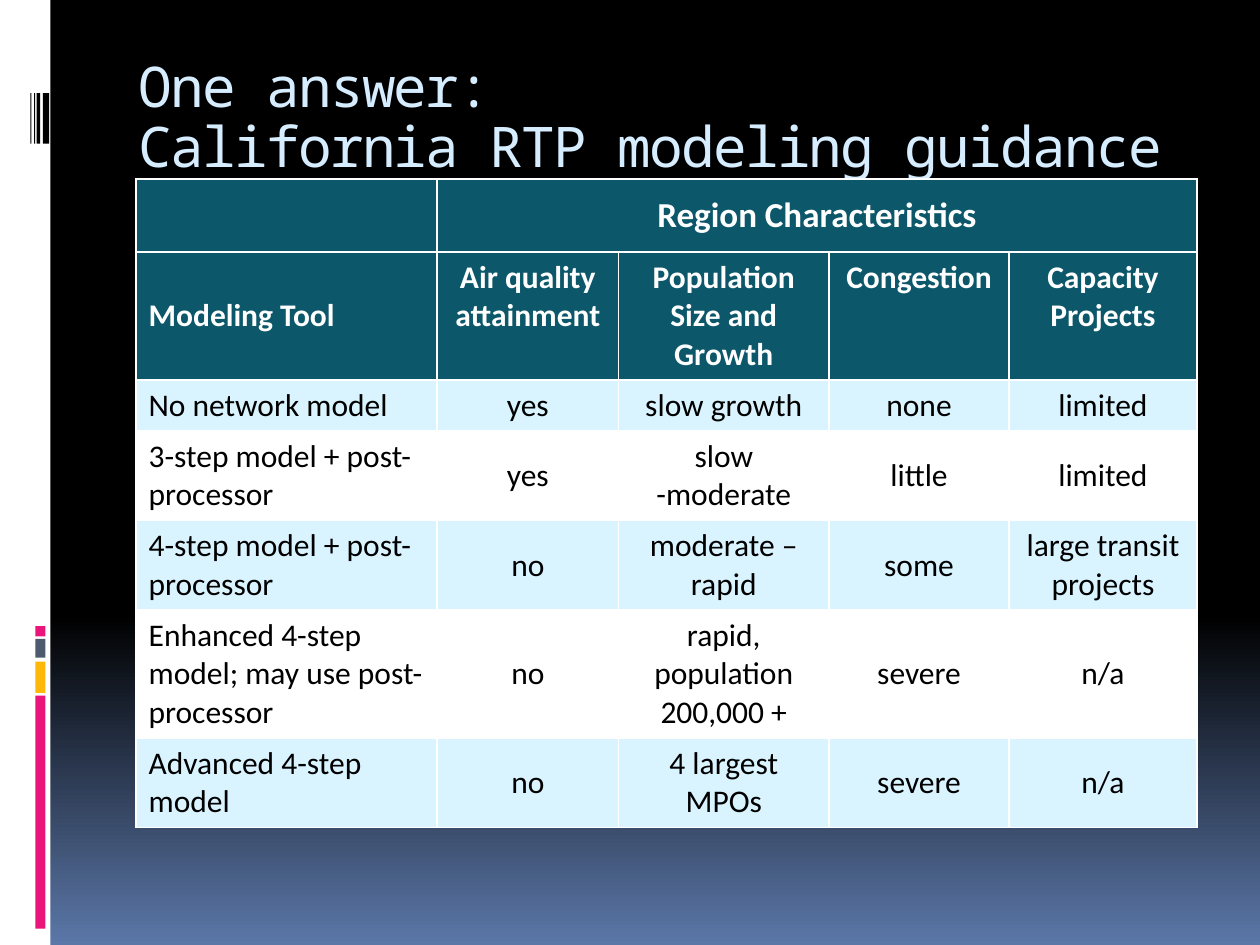
from dataclasses import dataclass

from lxml import etree
from pptx import Presentation
from pptx import util as u
from pptx.dml.color import RGBColor
from pptx.enum import shapes, text
from pptx.oxml.ns import qn


@dataclass(frozen=True)
class Theme:
    black: str = "000000"
    white: str = "FFFFFF"
    dusk: str = "5B77A8"
    pink: str = "EA157A"
    amber: str = "FEB80A"
    slate: str = "4E5B6F"
    title: str = "D6ECFF"
    header: str = "0C586A"
    band: str = "D9F4FF"
    title_font: str = "Noto Sans Mono"
    body_font: str = "Calibri"
    title_size: int = 32
    group_size: int = 20
    body_size: int = 18


theme = Theme()


def add_bar(slide, left, top, width, height, color):
    bar = slide.shapes.add_shape(
        shapes.MSO_SHAPE.RECTANGLE, *map(u.Inches, (left, top, width, height)))
    bar.shadow.inherit = False
    bar.fill.solid()
    bar.fill.fore_color.rgb = RGBColor.from_string(color)
    bar.line.fill.background()


def add_borders(cell, color):
    """Draw a 1 pt line on all four sides; must run before the cell is filled."""
    properties = cell._tc.get_or_add_tcPr()
    for side in ("a:lnL", "a:lnR", "a:lnT", "a:lnB"):
        line = etree.SubElement(properties, qn(side), w=str(u.Pt(1)))
        fill = etree.SubElement(line, qn("a:solidFill"))
        etree.SubElement(fill, qn("a:srgbClr"), val=color)


presentation = Presentation()
presentation.slide_width = u.Inches(10)
presentation.slide_height = u.Inches(7.5)
slide = presentation.slides.add_slide(presentation.slide_layouts[5])

# Background: black until 65 %, then fading to blue at the bottom
background = slide.background.fill
background.gradient()
background.gradient_angle = 270
for stop, position, color in zip(
        background.gradient_stops, (0.65, 1), (theme.black, theme.dusk)):
    stop.position = position
    stop.color.rgb = RGBColor.from_string(color)

# Side strip with coloured blocks and black stripes
add_bar(slide, 0, 0, 0.4, 7.5, theme.white)
for top, height, color in ((5.52, 1.85, theme.pink), (5.25, 0.25, theme.amber),
                           (5.07, 0.15, theme.slate), (4.97, 0.08, theme.pink)):
    add_bar(slide, 0.28, top, 0.08, height, color)
for left, width in ((0.34, 0.05), (0.29, 0.03), (0.27, 0.01), (0.24, 0.01)):
    add_bar(slide, left, 0.74, width, 0.4, theme.black)

# Title
title = slide.shapes.title
title.left, title.top, title.width, title.height = map(
    u.Inches, (1, 0.25, 8.5, 1.17))
frame = title.text_frame
frame.text = "One answer:\vCalifornia RTP modeling guidance"
frame.auto_size = text.MSO_AUTO_SIZE.NONE
frame.vertical_anchor = text.MSO_ANCHOR.BOTTOM
frame.margin_bottom = 0
paragraph = frame.paragraphs[0]
paragraph.alignment = text.PP_ALIGN.LEFT
paragraph.line_spacing = 0.88
paragraph.font.name = theme.title_font
paragraph.font.size = u.Pt(theme.title_size)
paragraph.font.color.rgb = RGBColor.from_string(theme.title)
for run in paragraph.runs:
    run._r.get_or_add_rPr().set("spc", "-100")

# Table
rows = [
    ["", "Region Characteristics", "", "", ""],
    ["Modeling Tool", "Air quality attainment", "Population Size and Growth",
     "Congestion", "Capacity Projects"],
    ["No network model", "yes", "slow growth", "none", "limited"],
    ["3-step model + post-processor", "yes", "slow -moderate", "little", "limited"],
    ["4-step model + post-processor", "no", "moderate – rapid", "some",
     "large transit projects"],
    ["Enhanced 4-step model; may use post-processor", "no",
     "rapid,\npopulation 200,000 +", "severe", "n/a"],
    ["Advanced 4-step model", "no", "4 largest MPOs", "severe", "n/a"],
]
column_widths = (2.39, 1.44, 1.67, 1.43, 1.49)
text_lines = (3, 1, 2, 2, 3, 2)
row_heights = [0.58] + [0.1 + 0.3 * lines for lines in text_lines]

table = slide.shapes.add_table(
    len(rows), len(column_widths), u.Inches(1.08), u.Inches(1.42),
    u.Inches(sum(column_widths)), u.Inches(sum(row_heights))).table
for column, width in zip(table.columns, column_widths):
    column.width = u.Inches(width)
for row, height in zip(table.rows, row_heights):
    row.height = u.Inches(height)
table.cell(0, 1).merge(table.cell(0, 4))

for r, values in enumerate(rows):
    is_header = r < 2
    fill = theme.header if is_header else (theme.band, theme.white)[r % 2]
    color = theme.white if is_header else theme.black
    size = theme.group_size if r == 0 else theme.body_size
    for c, value in enumerate(values):
        cell = table.cell(r, c)
        add_borders(cell, theme.white)
        cell.fill.solid()
        cell.fill.fore_color.rgb = RGBColor.from_string(fill)
        if not value:
            continue
        cell.text = value
        cell.vertical_anchor = (text.MSO_ANCHOR.TOP if r == 1 and c > 0
                                else text.MSO_ANCHOR.MIDDLE)
        for paragraph in cell.text_frame.paragraphs:
            paragraph.alignment = (text.PP_ALIGN.CENTER if c > 0
                                   else text.PP_ALIGN.LEFT)
            paragraph.font.name = theme.body_font
            paragraph.font.size = u.Pt(size)
            paragraph.font.bold = is_header
            paragraph.font.color.rgb = RGBColor.from_string(color)

presentation.save("out.pptx")
